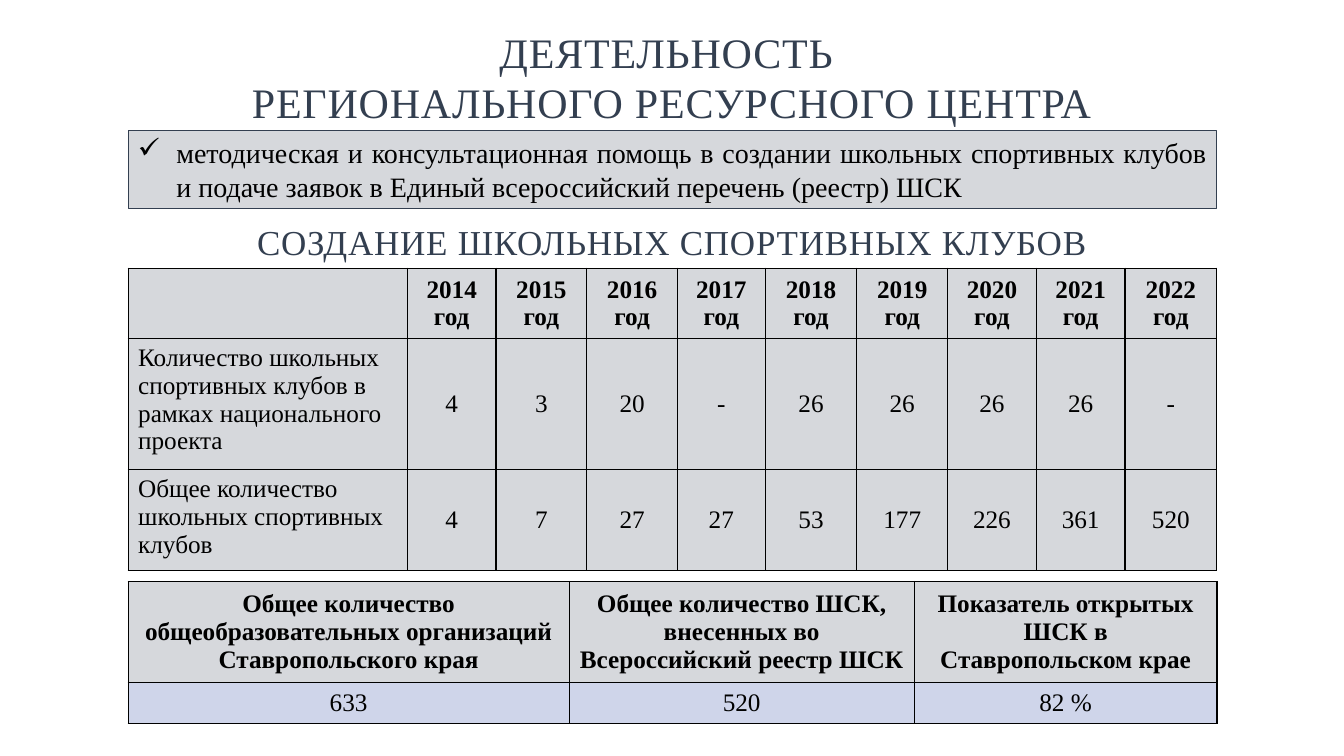
from dataclasses import dataclass
from typing import Any

from lxml import etree
from pptx import Presentation
from pptx import util as u
from pptx.dml.color import RGBColor
from pptx.enum import shapes, text
from pptx.oxml.ns import qn


@dataclass(frozen=True)
class Theme:
    font: str = "Times New Roman"
    slate: str = "333F50"
    outline: str = "3B3838"
    ink: str = "000000"
    lavender: str = "CFD5EA"
    tint_percent: int = 20
    title_pt: int = 30
    heading_pt: int = 25
    body_pt: int = 20
    table_pt: int = 18


@dataclass(frozen=True)
class Area:
    """A rectangle in percent of the slide's width and height."""
    left: float
    top: float
    width: float
    height: float


@dataclass(frozen=True)
class Heading:
    area: Area
    lines: tuple[str, ...]
    size: int


@dataclass(frozen=True)
class Grid:
    """A table whose columns and rows share its area by weight."""
    area: Area
    cols: tuple[int, ...]
    rows: tuple[int, ...]
    cells: tuple[tuple[str, ...], ...]
    label_col: bool = False
    plain_last_row: bool = False


THEME = Theme()
SLIDE_W, SLIDE_H = u.Inches(13.33), u.Inches(7.5)
LEFT, WIDTH = 9.53, 81.02
HEAD_LEFT, HEAD_WIDTH = 5.33, 89.35

HEADINGS = (
    Heading(Area(HEAD_LEFT, 2.8, HEAD_WIDTH, 14.8),
            ("ДЕЯТЕЛЬНОСТЬ ", "РЕГИОНАЛЬНОГО РЕСУРСНОГО ЦЕНТРА"), THEME.title_pt),
    Heading(Area(HEAD_LEFT, 28.53, HEAD_WIDTH, 6.93),
            ("СОЗДАНИЕ ШКОЛЬНЫХ СПОРТИВНЫХ КЛУБОВ",), THEME.heading_pt),
)
TASK_AREA = Area(LEFT, 17.33, WIDTH, 10.27)
TASK = ("методическая и консультационная помощь в создании школьных спортивных клубов "
        "и подаче заявок в Единый всероссийский перечень (реестр) ШСК")
GRIDS = (
    Grid(Area(LEFT, 35.47, WIDTH, 40),
         (277, 88, 90, 90, 87, 91, 90, 88, 88, 91), (7, 13, 10),
         (("", *(f"{year} год" for year in range(2014, 2023))),
          ("Количество школьных спортивных клубов в рамках национального проекта",
           "4", "3", "20", "-", "26", "26", "26", "26", "-"),
          ("Общее количество школьных спортивных клубов",
           "4", "7", "27", "27", "53", "177", "226", "361", "520")),
         label_col=True),
    Grid(Area(LEFT, 76.93, WIDTH, 18.8), (437, 342, 300), (100, 41),
         (("Общее количество общеобразовательных организаций Ставропольского края",
           "Общее количество ШСК, внесенных во Всероссийский реестр ШСК",
           "Показатель открытых ШСК в Ставропольском крае"),
          ("633", "520", "82 %")),
         plain_last_row=True),
)


def place(area: Area) -> tuple[int, int, int, int]:
    return (int(SLIDE_W * area.left / 100), int(SLIDE_H * area.top / 100),
            int(SLIDE_W * area.width / 100), int(SLIDE_H * area.height / 100))


def style(p: Any, size: int, color: str, align: Any, bold: bool = False) -> None:
    p.alignment = align
    for r in p.runs:
        r.font.name, r.font.size, r.font.bold = THEME.font, u.Pt(size), bold
        r.font.color.rgb = RGBColor.from_string(color)


def fill_solid(fill: Any, color: str) -> None:
    fill.solid()
    fill.fore_color.rgb = RGBColor.from_string(color)


def fill_tint(fill: Any, props: Any) -> None:
    """Fill with translucent slate; props is the element that holds the fill."""
    fill_solid(fill, THEME.slate)
    color = props.find(qn("a:solidFill")).find(qn("a:srgbClr"))
    etree.SubElement(color, qn("a:alpha"), val=str(THEME.tint_percent * 1000))


def make_line(parent: Any, tag: str, color: str) -> Any:
    ln = etree.SubElement(parent, qn(tag), w=str(u.Pt(1)))
    solid = etree.SubElement(ln, qn("a:solidFill"))
    etree.SubElement(solid, qn("a:srgbClr"), val=color)
    return ln


def add_heading(s: Any, heading: Heading) -> None:
    tf = s.shapes.add_textbox(*place(heading.area)).text_frame
    tf.word_wrap = True
    tf.auto_size = text.MSO_AUTO_SIZE.SHAPE_TO_FIT_TEXT
    tf.text = "\n".join(heading.lines)
    for p in tf.paragraphs:
        style(p, heading.size, THEME.slate, text.PP_ALIGN.CENTER)
        for r in p.runs:
            props = r.font._element
            props.set("spc", "60")
            props.insert(0, make_line(props, "a:ln", THEME.outline))


def add_task(s: Any) -> None:
    sp = s.shapes.add_shape(shapes.MSO_SHAPE.RECTANGLE, *place(TASK_AREA))
    sp.shadow.inherit = False
    fill_tint(sp.fill, sp._element.spPr)
    sp.line.color.rgb = RGBColor.from_string(THEME.slate)
    sp.line.width = u.Pt(0.75)
    tf = sp.text_frame
    tf.word_wrap = True
    tf.auto_size = text.MSO_AUTO_SIZE.SHAPE_TO_FIT_TEXT
    tf.vertical_anchor = text.MSO_ANCHOR.TOP
    tf.text = TASK
    p = tf.paragraphs[0]
    props = p._p.get_or_add_pPr()
    indent = u.Inches(0.38)
    props.set("marL", str(indent))
    props.set("indent", str(-indent))
    etree.SubElement(props, qn("a:buChar"), char="✓")
    style(p, THEME.body_pt, THEME.ink, text.PP_ALIGN.JUSTIFY)


def add_grid(s: Any, grid: Grid) -> None:
    left, top, width, height = place(grid.area)
    table = s.shapes.add_table(len(grid.rows), len(grid.cols), left, top, width, height).table
    table.first_row = table.horz_banding = False
    for col, weight in zip(table.columns, grid.cols):
        col.width = int(width * weight / sum(grid.cols))
    for row, weight in zip(table.rows, grid.rows):
        row.height = int(height * weight / sum(grid.rows))
    for i, texts in enumerate(grid.cells):
        for j, label in enumerate(texts):
            cell = table.cell(i, j)
            props = cell._tc.get_or_add_tcPr()
            for side in "LRTB":
                make_line(props, f"a:ln{side}", THEME.ink)
            if grid.plain_last_row and i == len(grid.rows) - 1:
                fill_solid(cell.fill, THEME.lavender)
            else:
                fill_tint(cell.fill, props)
            cell.text_frame.text = label
            is_label = grid.label_col and j == 0
            cell.vertical_anchor = text.MSO_ANCHOR.TOP if is_label else text.MSO_ANCHOR.MIDDLE
            align = text.PP_ALIGN.LEFT if is_label else text.PP_ALIGN.CENTER
            style(cell.text_frame.paragraphs[0], THEME.table_pt, THEME.ink, align, bold=i == 0)


def main() -> None:
    prs = Presentation()
    prs.slide_width, prs.slide_height = SLIDE_W, SLIDE_H
    s = prs.slides.add_slide(prs.slide_layouts[6])
    for grid in GRIDS:
        add_grid(s, grid)
    add_task(s)
    for heading in HEADINGS:
        add_heading(s, heading)
    prs.save("out.pptx")


if __name__ == "__main__":
    main()
